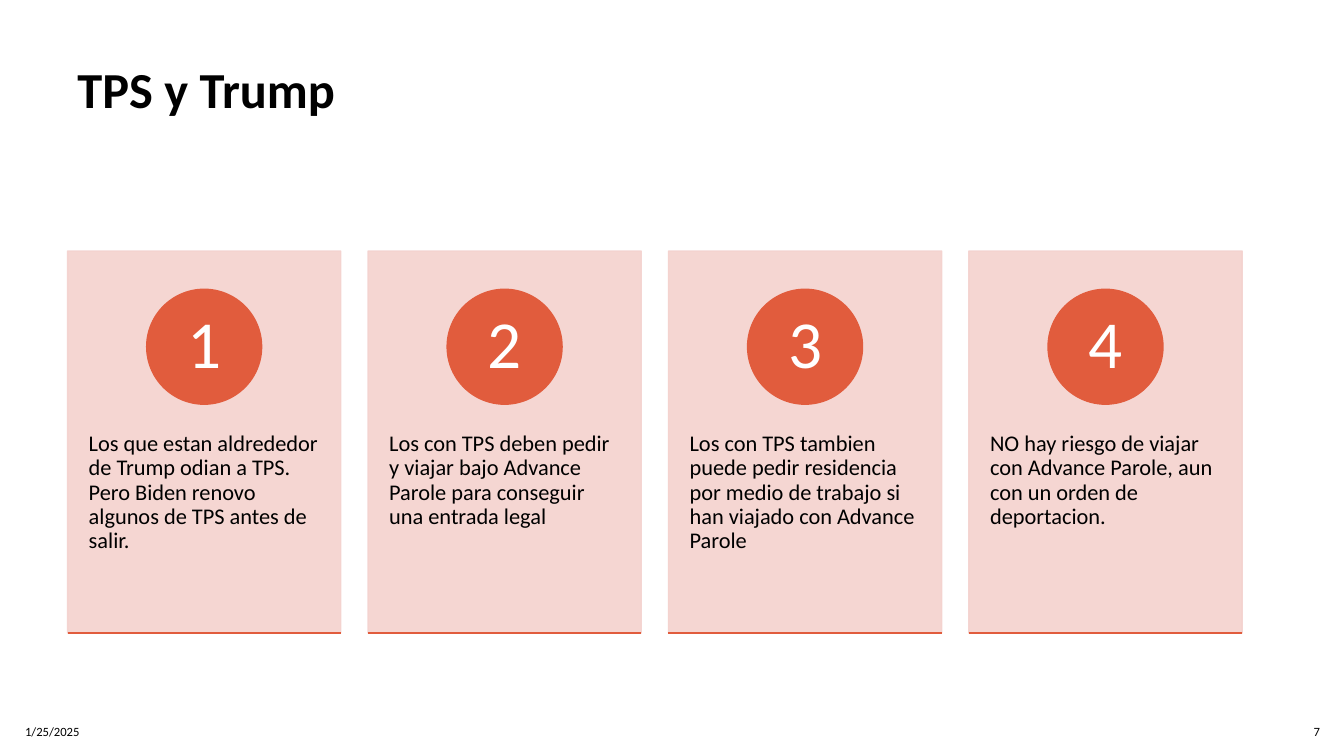
import lxml.etree
import pptx
import pptx.dml.color
import pptx.enum.shapes
import pptx.enum.text
import pptx.oxml.ns
import pptx.util

Inches = pptx.util.Inches
Shapes = pptx.enum.shapes.MSO_SHAPE
Align = pptx.enum.text.PP_ALIGN
Anchor = pptx.enum.text.MSO_ANCHOR
qualified = pptx.oxml.ns.qn

COLORS = {"text": "000000", "card": "F4D2CE", "accent": "E15C3D", "white": "FFFFFF"}
CARD_TEXTS = [
    "Los que estan aldrededor de Trump odian a TPS. Pero Biden renovo algunos de TPS antes de salir.",
    "Los con TPS deben pedir y viajar bajo Advance Parole para conseguir una entrada legal",
    "Los con TPS tambien puede pedir residencia por medio de trabajo si han viajado con Advance Parole",
    "NO hay riesgo de viajar con Advance Parole, aun con un orden de deportacion.",
]
CARD_LEFT, CARD_TOP, CARD_WIDTH, CARD_HEIGHT = 0.67, 2.49, 2.71, 3.79
CARD_PITCH = 2.98
CIRCLE_SIZE, NUMBER_SIZE = 1.14, 0.8


class SlideBuilder:
    font = "Calibri"

    def __init__(self, slide):
        self.slide = slide

    def color(self, name):
        return pptx.dml.color.RGBColor.from_string(COLORS[name])

    def text(self, box, content, size, color="text", bold=False, align=Align.LEFT,
             anchor=Anchor.TOP, insets=(0.1, 0.05), line_spacing=1.0, space_after=0):
        shape = self.slide.shapes.add_textbox(*map(Inches, box))
        frame = shape.text_frame
        frame.text = content
        frame.word_wrap = True
        frame.vertical_anchor = anchor
        frame.margin_left = frame.margin_right = Inches(insets[0])
        frame.margin_top = frame.margin_bottom = Inches(insets[1])
        paragraph = frame.paragraphs[0]
        paragraph.alignment = align
        paragraph.line_spacing = line_spacing
        paragraph.space_after = pptx.util.Pt(space_after)
        font = paragraph.runs[0].font
        font.name = self.font
        font.size = pptx.util.Pt(size)
        font.bold = bold
        font.color.rgb = self.color(color)

    def shape(self, kind, box, color, opacity=100):
        shape = self.slide.shapes.add_shape(kind, *map(Inches, box))
        shape.shadow.inherit = False
        shape.fill.solid()
        shape.fill.fore_color.rgb = self.color(color)
        shape.line.color.rgb = self.color(color)
        shape.line.width = pptx.util.Pt(1)
        if opacity < 100:
            for element in shape._element.spPr.iter(qualified("a:srgbClr")):
                lxml.etree.SubElement(element, qualified("a:alpha"), val=str(opacity * 1000))

    def rule(self, left, top, width):
        connector = self.slide.shapes.add_connector(
            pptx.enum.shapes.MSO_CONNECTOR.STRAIGHT,
            Inches(left), Inches(top), Inches(left + width), Inches(top))
        connector.line.color.rgb = self.color("accent")
        connector.line.width = pptx.util.Pt(1)
        lxml.etree.SubElement(connector._element.spPr, qualified("a:effectLst"))

    def card(self, left, number, content):
        center_x = left + CARD_WIDTH / 2
        center_y = CARD_TOP + 0.95
        self.shape(Shapes.RECTANGLE, (left, CARD_TOP, CARD_WIDTH, CARD_HEIGHT), "card", 90)
        self.text((left, 3.93, CARD_WIDTH, 2.27), content, 16,
                  insets=(0.21, 0.36), line_spacing=0.9)
        self.shape(Shapes.OVAL, self.square(center_x, center_y, CIRCLE_SIZE), "accent")
        self.text(self.square(center_x, center_y, NUMBER_SIZE), str(number), 48, "white",
                  align=Align.CENTER, anchor=Anchor.MIDDLE, insets=(0.09, 0.01), line_spacing=0.9)
        self.rule(left, CARD_TOP + CARD_HEIGHT, CARD_WIDTH)

    def square(self, center_x, center_y, size):
        return center_x - size / 2, center_y - size / 2, size, size


def main():
    presentation = pptx.Presentation()
    presentation.slide_width = Inches(13.33)
    presentation.slide_height = Inches(7.5)
    builder = SlideBuilder(presentation.slides.add_slide(presentation.slide_layouts[6]))

    builder.text((0.67, 0.6, 11.65, 1.24), "TPS y Trump", 36, bold=True, line_spacing=0.9)
    builder.text((0.15, 7.06, 3.82, 0.4), "1/25/2025", 9, anchor=Anchor.MIDDLE, space_after=6)
    builder.text((12.72, 7.06, 0.47, 0.4), "7", 9, align=Align.RIGHT,
                 anchor=Anchor.MIDDLE, space_after=6)
    for index, content in enumerate(CARD_TEXTS):
        builder.card(CARD_LEFT + index * CARD_PITCH, index + 1, content)

    presentation.save("out.pptx")


if __name__ == "__main__":
    main()
